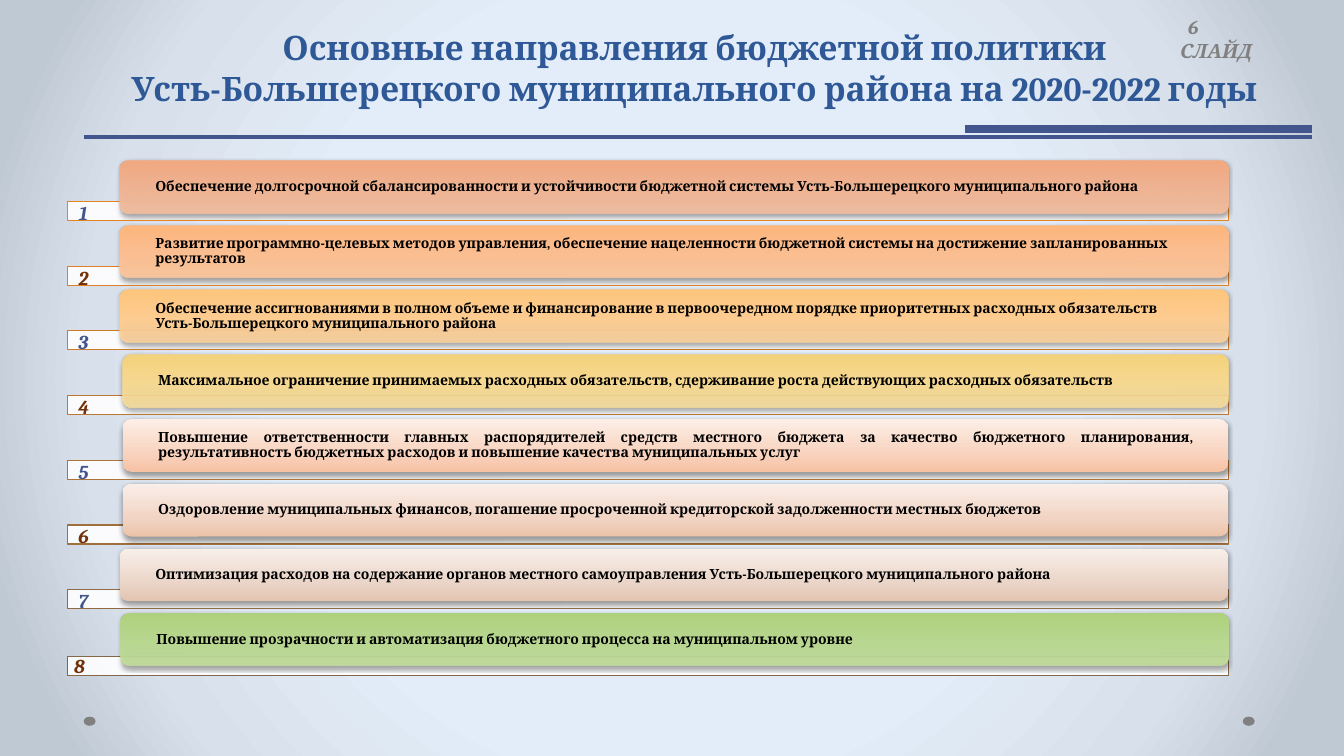
from dataclasses import dataclass

from lxml import etree
from pptx import Presentation
from pptx import util as u
from pptx.dml.color import RGBColor
from pptx.enum import shapes, text
from pptx.oxml.ns import qn

ALIGN = text.PP_ALIGN
ANCHOR = text.MSO_ANCHOR
PRESET = shapes.MSO_SHAPE


@dataclass(frozen=True)
class Theme:
    font: str = "Cambria"
    title: str = "2F5897"
    navy: str = "42568D"
    brown: str = "723008"
    grey: str = "808080"
    black: str = "000000"
    white: str = "FFFFFF"
    title_size: int = 24
    number_size: int = 14
    body_size: int = 10
    backdrop: tuple = ((50, "E3EDF9"), (76, "D8E0EB"), (92, "BFC9D4"))


@dataclass(frozen=True)
class Direction:
    wording: str
    outline: str
    stops: tuple
    bar_left: float = 3.02
    align: ALIGN = ALIGN.JUSTIFY
    strip_shift: float = 0
    number_left: float = 1.47


@dataclass(frozen=True)
class Rule:
    left: float
    top: float
    width: float


THEME = Theme()
ROW_TOP, ROW_STEP = 4.05, 1.63
BAR_RIGHT, BAR_HEIGHT = 30.95, 1.32
STRIP_LEFT, STRIP_OFFSET, STRIP_HEIGHT = 1.7, 1.03, 0.48
NUMBER_OFFSET = 0.88

DIRECTIONS = (
    Direction("Обеспечение долгосрочной сбалансированности и устойчивости бюджетной системы "
              "Усть-Большерецкого муниципального района", "E68422",
              ((0, "F3BFA1", 93), (50, "F0B493"), (100, "F3A97F")), align=ALIGN.LEFT),
    Direction("Развитие программно-целевых методов управления, обеспечение нацеленности "
              "бюджетной системы на достижение запланированных результатов", "DC8023",
              ((0, "FEC89E", 93), (50, "FCBF91"), (100, "FFB77C")), align=ALIGN.LEFT),
    Direction("Обеспечение ассигнованиями в полном объеме и финансирование в первоочередном "
              "порядке приоритетных расходных обязательств Усть-Большерецкого "
              "муниципального района", "CC7B2B",
              ((0, "FFD49E", 85), (50, "FFCD90"), (100, "FFC77C")), align=ALIGN.LEFT),
    Direction("Максимальное ограничение принимаемых расходных обязательств, сдерживание роста "
              "действующих расходных обязательств", "BC7732",
              ((0, "FFE29D", 81), (50, "F7D990"), (100, "F6D47C")), bar_left=3.09),
    Direction("Повышение ответственности главных распорядителей средств местного бюджета за "
              "качество бюджетного планирования, результативность бюджетных расходов и "
              "повышение качества муниципальных услуг", "AD7338",
              ((0, "F7C1A3"), (35, "F8D3BF"), (100, "FDEEE6")), bar_left=3.09),
    Direction("Оздоровление муниципальных финансов, погашение просроченной кредиторской "
              "задолженности местных бюджетов", "9F6F3E",
              ((0, "ECC3AA"), (35, "F1D4C4"), (100, "FAEEE8")), bar_left=3.09),
    Direction("Оптимизация расходов на содержание органов местного самоуправления "
              "Усть-Большерецкого муниципального района", "916A43",
              ((0, "E3C4AF"), (35, "EAD5C8"), (100, "F8EFE9"))),
    Direction("Повышение прозрачности и автоматизация бюджетного процесса на муниципальном "
              "уровне", "846648",
              ((0, "C4E19D", 88), (50, "B9D890"), (100, "AFD37C")), bar_left=3.05,
              strip_shift=0.05, number_left=1.37),
)

RULES = ((Rule(2.11, 3.45, 30.96), 2.5), (Rule(24.31, 3.25, 8.76), 6))


def add_node(parent, tag: str, **attributes):
    return etree.SubElement(parent, qn(tag), {k: str(v) for k, v in attributes.items()})


def add_color(parent, color: str, opacity: int = 100) -> None:
    node = add_node(parent, "a:srgbClr", val=color)
    if opacity < 100:
        add_node(node, "a:alpha", val=opacity * 1000)


def set_gradient(fill, owner, stops: tuple, radial: bool = False) -> None:
    fill.gradient()
    gradient = owner.find(".//" + qn("a:gradFill"))
    for child in list(gradient):
        gradient.remove(child)
    stop_list = add_node(gradient, "a:gsLst")
    for position, *color in stops:
        add_color(add_node(stop_list, "a:gs", pos=position * 1000), *color)
    if radial:
        route = add_node(gradient, "a:path", path="circle")
        add_node(route, "a:fillToRect", l=50000, t=50000, r=50000, b=50000)
    else:
        add_node(gradient, "a:lin", ang=270 * 60000, scaled=0)


def write_text(shape, wording: str, *, size: int, color: str, italic: bool = False,
               align: ALIGN = ALIGN.CENTER, anchor: ANCHOR = ANCHOR.TOP,
               spacing: float = 1.0, side_inset: float = 0.25, end_inset: float = 0.13):
    frame = shape.text_frame
    frame.word_wrap = True
    frame.auto_size = text.MSO_AUTO_SIZE.NONE
    frame.vertical_anchor = anchor
    frame.margin_left = frame.margin_right = u.Cm(side_inset)
    frame.margin_top = frame.margin_bottom = u.Cm(end_inset)
    paragraph = frame.paragraphs[0]
    paragraph.text = wording
    paragraph.alignment = align
    paragraph.line_spacing = spacing
    for run in paragraph.runs:
        run.font.name = THEME.font
        run.font.size = u.Pt(size)
        run.font.bold = True
        run.font.italic = italic
        run.font.color.rgb = RGBColor.from_string(color)
    return paragraph


def add_box(slide, preset: PRESET, left: float, top: float, width: float, height: float):
    shape = slide.shapes.add_shape(preset, u.Cm(left), u.Cm(top), u.Cm(width), u.Cm(height))
    shape.shadow.inherit = False
    shape.line.fill.background()
    return shape


def add_label(slide, left: float, top: float, width: float, height: float):
    return slide.shapes.add_textbox(u.Cm(left), u.Cm(top), u.Cm(width), u.Cm(height))


def add_direction(slide, index: int, item: Direction) -> None:
    top = ROW_TOP + index * ROW_STEP
    strip = add_box(slide, PRESET.RECTANGLE, STRIP_LEFT, top + STRIP_OFFSET + item.strip_shift,
                    BAR_RIGHT - STRIP_LEFT, STRIP_HEIGHT)
    strip.fill.solid()
    strip.fill.fore_color.rgb = RGBColor.from_string(THEME.white)
    add_node(strip.element.spPr.find(".//" + qn("a:srgbClr")), "a:alpha", val=90000)
    strip.line.color.rgb = RGBColor.from_string(item.outline)
    strip.line.width = u.Pt(0.75)

    bar = add_box(slide, PRESET.ROUNDED_RECTANGLE, item.bar_left, top,
                  BAR_RIGHT - item.bar_left, BAR_HEIGHT)
    set_gradient(bar.fill, bar.element, item.stops)
    shadow = add_node(bar.element.spPr.find(qn("a:effectLst")), "a:outerShdw",
                      blurRad=u.Pt(3.1), dist=u.Pt(1.6), dir=90 * 60000, rotWithShape=0)
    add_color(shadow, THEME.black, 38)
    write_text(bar, item.wording, size=THEME.body_size, color=THEME.black, align=item.align,
               anchor=ANCHOR.MIDDLE, spacing=0.9, side_inset=0.83, end_inset=0)


def add_number(slide, index: int, item: Direction) -> None:
    label = add_label(slide, item.number_left, ROW_TOP + index * ROW_STEP + NUMBER_OFFSET,
                      1.27, 0.86)
    color = THEME.navy if index % 2 == 0 else THEME.brown
    write_text(label, str(index + 1), size=THEME.number_size, color=color, italic=True)


def add_rule(slide, rule: Rule, weight: float) -> None:
    line = slide.shapes.add_connector(shapes.MSO_CONNECTOR.STRAIGHT, u.Cm(rule.left),
                                      u.Cm(rule.top), u.Cm(rule.left + rule.width),
                                      u.Cm(rule.top))
    line.line.color.rgb = RGBColor.from_string(THEME.navy)
    line.line.width = u.Pt(weight)
    add_node(line.element.spPr, "a:effectLst")


def main() -> None:
    presentation = Presentation()
    presentation.slide_width, presentation.slide_height = u.Cm(33.87), u.Cm(19.05)
    slide = presentation.slides.add_slide(presentation.slide_layouts[5])
    set_gradient(slide.background.fill, slide.element, THEME.backdrop, radial=True)

    title = slide.shapes.title
    title.left, title.top, title.width, title.height = map(u.Cm, (2, 0.69, 31, 2.16))
    write_text(title, "Основные направления бюджетной политики\v"
               "Усть-Большерецкого муниципального района на 2020-2022 годы",
               size=THEME.title_size, color=THEME.title, anchor=ANCHOR.BOTTOM)

    for left in (31.32, 2.11):
        dot = add_box(slide, PRESET.OVAL, left, 18.06, 0.3, 0.23)
        dot.fill.solid()
        dot.fill.fore_color.rgb = RGBColor.from_string(THEME.grey)
    for index, item in enumerate(DIRECTIONS):
        add_direction(slide, index, item)
    for index, item in enumerate(DIRECTIONS):
        add_number(slide, index, item)

    page = add_label(slide, 29.49, 0.25, 2.45, 1.45)
    caption = write_text(page, "6 СЛАЙД", size=THEME.number_size, color=THEME.grey,
                         italic=True, align=ALIGN.LEFT)
    caption._p.get_or_add_pPr().set("indent", str(u.Cm(0.2)))
    for rule, weight in RULES:
        add_rule(slide, rule, weight)
    presentation.save("out.pptx")


if __name__ == "__main__":
    main()
